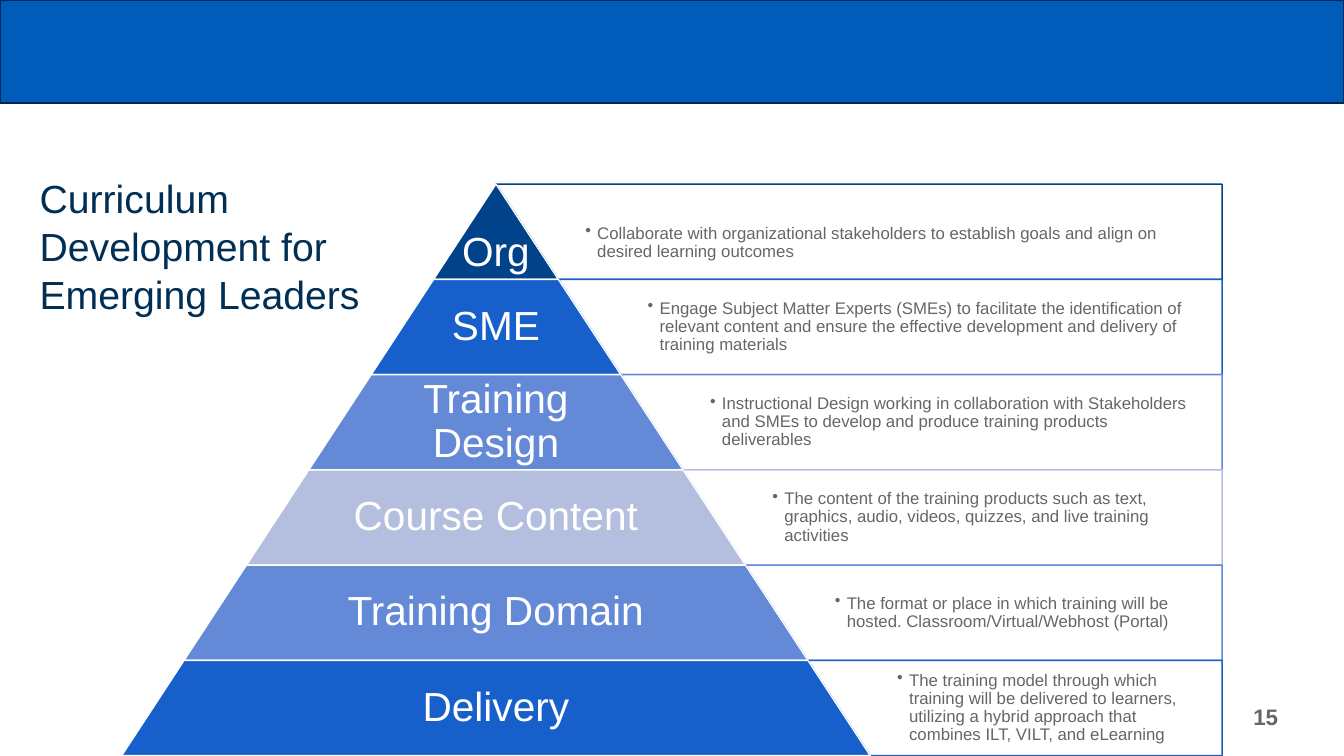
from dataclasses import dataclass

from lxml.etree import SubElement
from pptx import Presentation
from pptx.dml.color import RGBColor
from pptx.enum.shapes import MSO_SHAPE as Preset
from pptx.enum.text import MSO_ANCHOR as Anchor, PP_ALIGN as Align
from pptx.oxml.ns import qn
from pptx.shapes.autoshape import Shape
from pptx.slide import Slide
from pptx.util import Cm, Pt

SLIDE_WIDTH, SLIDE_HEIGHT = 33.87, 19.05
APEX_X, APEX_Y = 12.5, 4.64
TIER_HEIGHT = 2.4
SLOPE = 0.655
SIDE_STEP = SLOPE * TIER_HEIGHT
PANEL_RIGHT = 30.8
LABEL_SHARE = 0.65
BULLET_INDENT = 0.3
NAVY, BLUE, PERIWINKLE, LAVENDER = "00438A", "1760CB", "6389D7", "B4BEDE"
WHITE, GREY = "FFFFFF", "666666"


@dataclass
class Box:
    left: float
    top: float
    width: float
    height: float

    def lengths(self) -> list[Cm]:
        return [Cm(v) for v in (self.left, self.top, self.width, self.height)]


@dataclass
class Tier:
    label: str
    detail: str
    color: str


TIERS = [
    Tier("Org", "Collaborate with organizational stakeholders to establish goals "
         "and align on desired learning outcomes", NAVY),
    Tier("SME", "Engage Subject Matter Experts (SMEs) to facilitate the identification "
         "of relevant content and ensure the effective development and delivery of "
         "training materials", BLUE),
    Tier("Training Design", "Instructional Design working in collaboration with Stakeholders "
         "and SMEs to develop and produce training products deliverables", PERIWINKLE),
    Tier("Course Content", "The content of the training products such as text, graphics, "
         "audio, videos, quizzes, and live training activities", LAVENDER),
    Tier("Training Domain", "The format or place in which training will be hosted. "
         "Classroom/Virtual/Webhost (Portal)", PERIWINKLE),
    Tier("Delivery", "The training model through which training will be delivered to "
         "learners, utilizing a hybrid approach that combines ILT, VILT, and eLearning", BLUE),
]


def rgb(color: str) -> RGBColor:
    return RGBColor.from_string(color)


def add_panel(slide: Slide, preset: Preset, box: Box, fill: str, line: str,
              adjustments: tuple[float, ...] = ()) -> Shape:
    panel = slide.shapes.add_shape(preset, *box.lengths())
    panel.shadow.inherit = False
    panel.fill.solid()
    panel.fill.fore_color.rgb = rgb(fill)
    panel.line.color.rgb = rgb(line)
    panel.line.width = Pt(1)
    for index, value in enumerate(adjustments):
        panel.adjustments[index] = value
    return panel


def add_text(slide: Slide, box: Box, text: str, *, size: float, color: str,
             bold: bool = False, align: Align = Align.LEFT, anchor: Anchor = Anchor.MIDDLE,
             insets: tuple[float, float] = (0.25, 0.13), line_spacing: float = 0.9,
             space_after: float = 0, bullet: bool = False) -> None:
    frame = slide.shapes.add_textbox(*box.lengths()).text_frame
    frame.word_wrap = True
    frame.vertical_anchor = anchor
    frame.margin_left = frame.margin_right = Cm(insets[0])
    frame.margin_top = frame.margin_bottom = Cm(insets[1])
    frame.text = text
    for paragraph in frame.paragraphs:
        paragraph.alignment = align
        paragraph.line_spacing = line_spacing
        paragraph.space_after = Pt(space_after)
        if bullet:
            properties = paragraph._p.get_or_add_pPr()
            properties.set("marL", str(Cm(BULLET_INDENT)))
            properties.set("indent", str(-Cm(BULLET_INDENT)))
            SubElement(properties, qn("a:buChar"), char="•")
        paragraph.font.name = "Arial"
        paragraph.font.size = Pt(size)
        paragraph.font.bold = bold
        paragraph.font.color.rgb = rgb(color)


def add_tier(slide: Slide, level: int, tier: Tier) -> None:
    top = APEX_Y + level * TIER_HEIGHT
    half_width = (level + 1) * SIDE_STEP
    panel_left = APEX_X + level * SIDE_STEP
    detail_left = APEX_X + half_width
    share = LABEL_SHARE if level else 1
    anchor = Anchor.MIDDLE if level else Anchor.BOTTOM

    detail_panel = add_panel(
        slide, Preset.NON_ISOSCELES_TRAPEZOID,
        Box(panel_left, top, PANEL_RIGHT - panel_left, TIER_HEIGHT),
        WHITE, tier.color, (0, SLOPE))
    detail_panel.rotation = 180
    add_text(slide, Box(detail_left, top, PANEL_RIGHT - detail_left, TIER_HEIGHT),
             tier.detail, size=12, color=GREY, anchor=anchor,
             insets=(0.68, 0.68), bullet=True)
    add_panel(slide, Preset.TRAPEZOID,
              Box(APEX_X - half_width, top, 2 * half_width, TIER_HEIGHT),
              tier.color, WHITE, (SLOPE,))
    add_text(slide, Box(APEX_X - half_width * share, top, 2 * half_width * share, TIER_HEIGHT),
             tier.label, size=29, color=WHITE, align=Align.CENTER, anchor=anchor,
             insets=(0.1, 0.1))


def main() -> None:
    presentation = Presentation()
    presentation.slide_width = Cm(SLIDE_WIDTH)
    presentation.slide_height = Cm(SLIDE_HEIGHT)
    slide = presentation.slides.add_slide(presentation.slide_layouts[6])

    add_panel(slide, Preset.RECTANGLE, Box(0, 0, SLIDE_WIDTH, 2.6), "005BBB", "002852")
    add_text(slide, Box(21.03, 17.55, 11.43, 1.02), "15", size=16, color=GREY,
             bold=True, align=Align.RIGHT, line_spacing=1)
    for level, tier in enumerate(TIERS):
        add_tier(slide, level, tier)
    add_text(slide, Box(0.75, 4.4, 19.74, 3.35),
             "Curriculum\nDevelopment for\nEmerging Leaders",
             size=28, color="002F56", anchor=Anchor.TOP, space_after=4)

    presentation.save("out.pptx")


if __name__ == "__main__":
    main()
